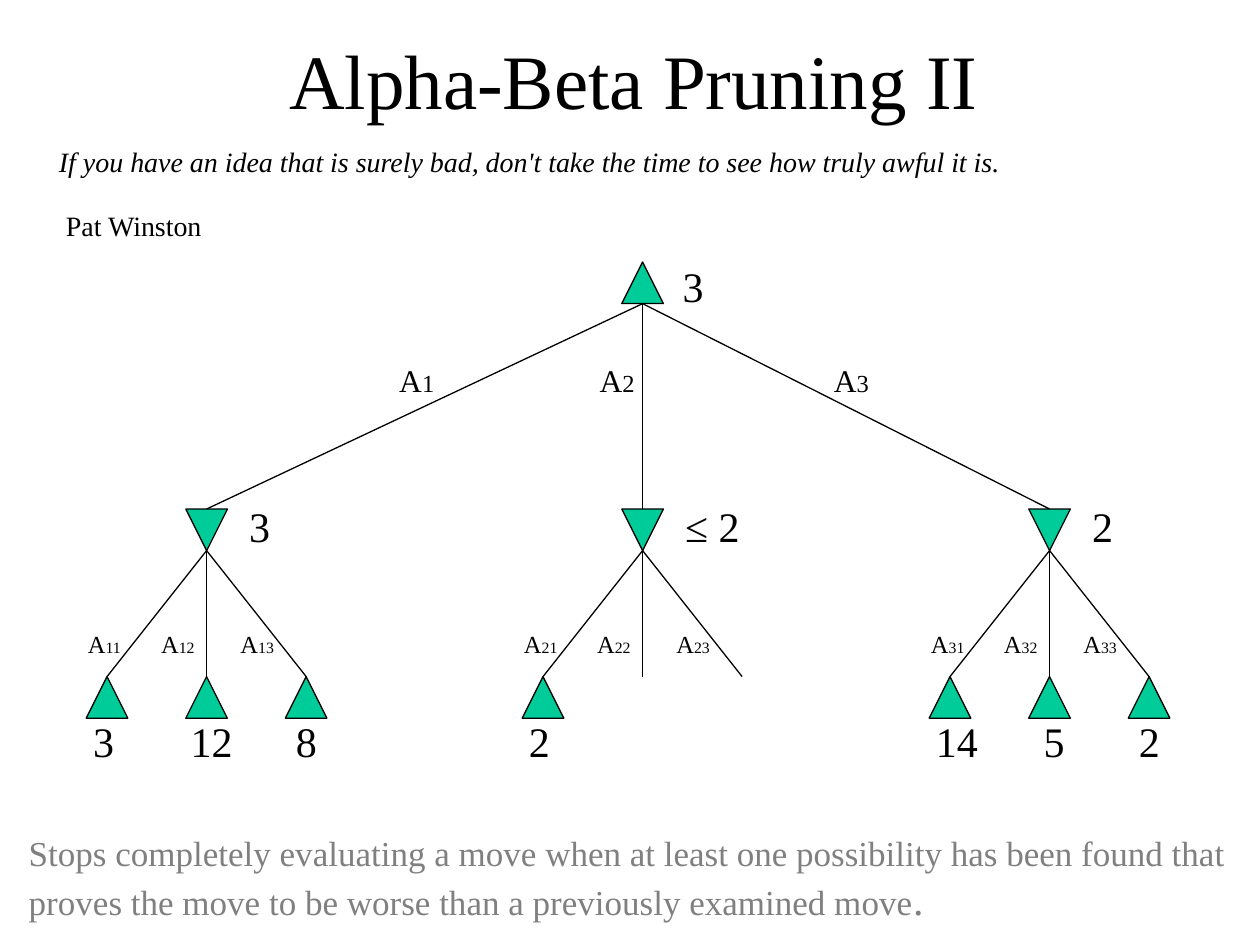
import dataclasses
import typing

import pptx
import pptx.dml.color
import pptx.enum.shapes
import pptx.enum.text
import pptx.util
from lxml import etree

Inches = pptx.util.Inches
Align = pptx.enum.text.PP_ALIGN
Fit = pptx.enum.text.MSO_AUTO_SIZE


@dataclasses.dataclass(frozen=True)
class Theme:
    font: str = "Times New Roman"
    ink: str = "000000"
    gray: str = "808080"
    green: str = "00CC99"
    line: float = 0.75
    title: int = 44
    value: int = 24
    note: int = 20
    quote: int = 16
    move: tuple[int, int] = (18, 14)
    reply: tuple[int, int] = (14, 9)


@dataclasses.dataclass(frozen=True)
class Branch:
    """One move of the root; an empty leaf is pruned."""
    mid: float
    bound: str
    leaves: tuple[str, str, str]
    label: float


THEME = Theme()
SIDE = 0.33
STEP = 0.79
ROOT_X, ROOT_Y = 5.1, 2.08
MIN_Y, LEAF_Y = 4.04, 5.37
MOVE_Y, REPLY_Y = 2.82, 4.94
REPLY_DX = (-1.04, -0.46, 0.17)
BRANCHES = (
    Branch(1.64, "3", ("3", "12", "8"), 3.07),
    Branch(5.1, "≤ 2", ("2", "", ""), 4.66),
    Branch(8.33, "2", ("14", "5", "2"), 6.52),
)


def style(run: typing.Any, size: int, color: str = THEME.ink) -> None:
    run.font.name = THEME.font
    run.font.size = pptx.util.Pt(size)
    run.font.color.rgb = pptx.dml.color.RGBColor.from_string(color)


def add_text(shapes: typing.Any, box: tuple[float, float, float, float],
             parts: list[tuple[str, int]], color: str = THEME.ink,
             wrap: bool = False, align: Align = Align.LEFT) -> typing.Any:
    """Add a text box whose first paragraph holds one run per part."""
    frame = shapes.add_textbox(*map(Inches, box)).text_frame
    frame.word_wrap = wrap
    frame.auto_size = Fit.SHAPE_TO_FIT_TEXT
    para = frame.paragraphs[0]
    para.alignment = align
    for text, size in parts:
        run = para.add_run()
        run.text = text
        style(run, size, color)
    return frame


def add_value(shapes: typing.Any, left: float, top: float, text: str) -> None:
    add_text(shapes, (left, top, width(text), 0.5), [(text, THEME.value)])


def width(text: str) -> float:
    return {1: 0.37, 2: 0.53}.get(len(text), 0.7)


def add_node(shapes: typing.Any, mid: float, top: float,
             down: bool = False) -> None:
    kind = pptx.enum.shapes.MSO_SHAPE.ISOSCELES_TRIANGLE
    node = shapes.add_shape(kind, Inches(mid - SIDE / 2), Inches(top),
                            Inches(SIDE), Inches(SIDE))
    node.shadow.inherit = False
    node.rotation = 180 if down else 0
    node.fill.solid()
    node.fill.fore_color.rgb = pptx.dml.color.RGBColor.from_string(THEME.green)
    ink(node)


def add_edge(shapes: typing.Any, start: tuple[float, float],
             end: tuple[float, float]) -> None:
    kind = pptx.enum.shapes.MSO_CONNECTOR.STRAIGHT
    edge = shapes.add_connector(kind, *map(Inches, start + end))
    ink(edge)
    etree.SubElement(edge._element.spPr, pptx.oxml.ns.qn("a:effectLst"))


def ink(shape: typing.Any) -> None:
    """Give a shape or connector the thin outline."""
    shape.line.color.rgb = pptx.dml.color.RGBColor.from_string(THEME.ink)
    shape.line.width = pptx.util.Pt(THEME.line)


def add_branch(shapes: typing.Any, branch: Branch, rank: int) -> None:
    mid = branch.mid
    add_node(shapes, mid, MIN_Y, down=True)
    add_value(shapes, mid + 0.24, 3.92, branch.bound)
    for i, leaf in enumerate(branch.leaves):
        spot = mid + (i - 1) * STEP
        add_edge(shapes, (mid, MIN_Y + SIDE), (spot, LEAF_Y))
        add_text(shapes, (mid + REPLY_DX[i], REPLY_Y, 0.47, 0.33),
                 list(zip(("A", f"{rank}{i + 1}"), THEME.reply)))
        if leaf:
            add_node(shapes, spot, LEAF_Y)
            shift = (-1.0, 0.04 - width(leaf) / 2, 0.61)[i]
            add_value(shapes, mid + shift, 5.63, leaf)


def add_root(shapes: typing.Any) -> None:
    for rank, branch in enumerate(BRANCHES, 1):
        add_edge(shapes, (ROOT_X, ROOT_Y + SIDE), (branch.mid, MIN_Y))
        add_text(shapes, (branch.label, MOVE_Y, 0.48, 0.4),
                 list(zip(("A", str(rank)), THEME.move)))
    add_node(shapes, ROOT_X, ROOT_Y)
    add_value(shapes, 5.32, 2.02, "3")


def add_quote(shapes: typing.Any) -> None:
    frame = add_text(shapes, (0.37, 1.1, 8.26, 1.39), [(
        "If you have an idea that is surely bad, don't take the time "
        "to see how truly awful it is.", THEME.quote)], wrap=True)
    quote = frame.paragraphs[0]
    quote.runs[0].font.italic = True
    author = frame.add_paragraph()
    author.text = " Pat Winston"
    style(author.runs[0], THEME.quote)
    for para, before in ((quote, 5), (author, 12)):
        para.space_before = pptx.util.Pt(before)
        para.space_after = pptx.util.Pt(5)


def main() -> None:
    deck = pptx.Presentation()
    deck.slide_width, deck.slide_height = Inches(10), Inches(7.5)
    shapes = deck.slides.add_slide(deck.slide_layouts[6]).shapes

    title = add_text(shapes, (0.78, 0, 8.5, 1.25),
                     [("Alpha-Beta Pruning II", THEME.title)],
                     wrap=True, align=Align.CENTER)
    title.auto_size = Fit.NONE
    title.vertical_anchor = pptx.enum.text.MSO_ANCHOR.MIDDLE

    for rank, branch in enumerate(BRANCHES, 1):
        add_branch(shapes.add_group_shape().shapes, branch, rank)
    add_root(shapes)
    add_quote(shapes)
    add_text(shapes, (0.13, 6.55, 9.87, 0.84), [
        ("Stops completely evaluating a move when at least one possibility "
         "has been found that proves the move to be worse than a previously "
         "examined move", THEME.note), (".", THEME.value)],
        color=THEME.gray, wrap=True)
    deck.save("out.pptx")


if __name__ == "__main__":
    main()
